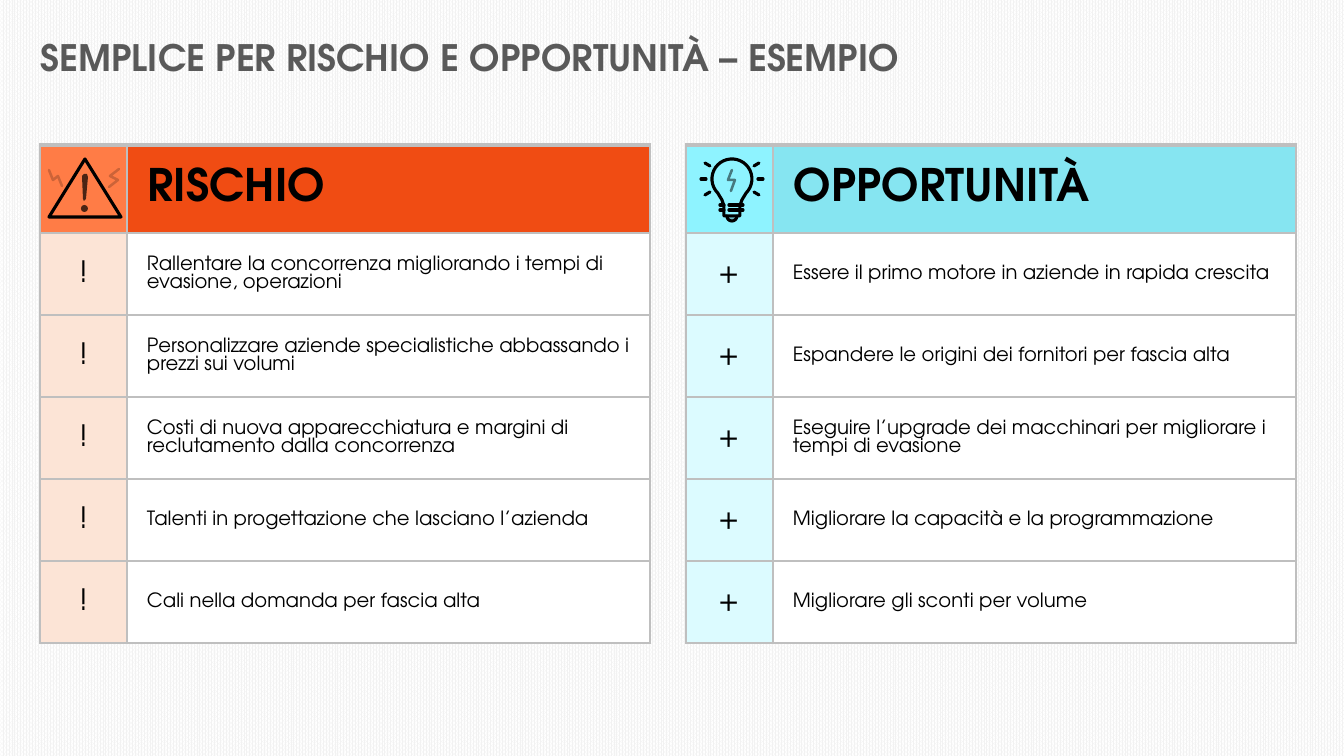
from dataclasses import dataclass
from math import cos, radians, sin

from pptx import Presentation
from pptx.dml.color import RGBColor
from pptx.enum.dml import MSO_PATTERN
from pptx.enum.shapes import MSO_CONNECTOR, MSO_SHAPE
from pptx.enum.text import MSO_ANCHOR, PP_ALIGN
from pptx.oxml.ns import qn
from pptx.util import Pt
from lxml.etree import SubElement

SCALE = 12192000 / 1344


@dataclass(frozen=True)
class Theme:
    font: str = "TeX Gyre Adventor"
    title: str = "595959"
    ink: str = "000000"
    border: str = "BFBFBF"
    paper: str = "FFFFFF"
    weave: str = "F2F2F2"
    title_size: int = 26
    heading_size: int = 32
    mark_size: int = 21
    body_size: int = 14
    icon_line: float = 2.25
    bolt_line: float = 1.8


@dataclass(frozen=True)
class Panel:
    left: int
    heading: str
    mark: str
    icon_fill: str
    heading_fill: str
    mark_fill: str
    items: tuple


THEME = Theme()
TOP, HEADER_HEIGHT, ROW_HEIGHT = 145, 88, 82
MARK_WIDTH, TEXT_WIDTH = 87, 523
PANELS = (
    Panel(40, "RISCHIO", "!", "FF7C46", "F04C13", "FCE4D6", (
        "Rallentare la concorrenza migliorando i tempi di evasione, operazioni",
        "Personalizzare aziende specialistiche abbassando i prezzi sui volumi",
        "Costi di nuova apparecchiatura e margini di reclutamento dalla concorrenza",
        "Talenti in progettazione che lasciano l’azienda",
        "Cali nella domanda per fascia alta",
    )),
    Panel(686, "OPPORTUNITÀ", "+", "8EF3FF", "86E5F1", "DCFBFF", (
        "Essere il primo motore in aziende in rapida crescita",
        "Espandere le origini dei fornitori per fascia alta",
        "Eseguire l’upgrade dei macchinari per migliorare i tempi di evasione",
        "Migliorare la capacità e la programmazione",
        "Migliorare gli sconti per volume",
    )),
)


def px(length):
    return round(length * SCALE)


def rgb(code):
    return RGBColor.from_string(code)


def style_text(frame, size, color=THEME.ink, bold=False, align=PP_ALIGN.LEFT):
    for para in frame.paragraphs:
        para.alignment = align
        for span in para.runs:
            span.font.name = THEME.font
            span.font.size = Pt(size)
            span.font.bold = bold
            span.font.color.rgb = rgb(color)


def add_title(page, text):
    box = page.shapes.add_textbox(px(31), px(30), px(969), px(54))
    frame = box.text_frame
    frame.word_wrap = True
    frame.vertical_anchor = MSO_ANCHOR.BOTTOM
    frame.text = text
    style_text(frame, THEME.title_size, THEME.title, bold=True)


def set_borders(cell, top, right):
    properties = cell._tc.get_or_add_tcPr()
    for side, width in (("L", 1), ("R", right), ("T", top), ("B", 1)):
        line = SubElement(properties, qn(f"a:ln{side}"), w=str(Pt(width)))
        fill = SubElement(line, qn("a:solidFill"))
        SubElement(fill, qn("a:srgbClr"), val=THEME.border)


def fill_cell(cell, text, fill, size, indent=1, bold=False, align=PP_ALIGN.LEFT,
              top=1, right=1):
    set_borders(cell, top, right)
    cell.fill.solid()
    cell.fill.fore_color.rgb = rgb(fill)
    cell.vertical_anchor = MSO_ANCHOR.MIDDLE
    cell.margin_left = px(indent)
    cell.margin_top = cell.margin_right = px(1)
    cell.margin_bottom = 0
    cell.text_frame.text = text
    style_text(cell.text_frame, size, bold=bold, align=align)


def add_panel(page, panel):
    count = len(panel.items)
    table = page.shapes.add_table(
        count + 1, 2, px(panel.left), px(TOP), px(MARK_WIDTH + TEXT_WIDTH),
        px(HEADER_HEIGHT + count * ROW_HEIGHT)).table
    table.first_row = table.horz_banding = False
    for column, width in zip(table.columns, (MARK_WIDTH, TEXT_WIDTH)):
        column.width = px(width)
    for row, height in zip(table.rows, [HEADER_HEIGHT] + [ROW_HEIGHT] * count):
        row.height = px(height)
    fill_cell(table.cell(0, 0), "", panel.icon_fill, THEME.body_size, top=3)
    fill_cell(table.cell(0, 1), panel.heading, panel.heading_fill,
              THEME.heading_size, indent=21, bold=True, top=3, right=2.25)
    for row, item in enumerate(panel.items, 1):
        fill_cell(table.cell(row, 0), panel.mark, panel.mark_fill,
                  THEME.mark_size, align=PP_ALIGN.CENTER)
        fill_cell(table.cell(row, 1), item, THEME.paper, THEME.body_size,
                  indent=20, right=2.25)


def set_opacity(shape, percent):
    if percent < 100:
        for color in shape._element.spPr.iter(qn("a:srgbClr")):
            SubElement(color, qn("a:alpha"), val=str(percent * 1000))


def ink_line(shape, width, opacity=100):
    shape.line.width = Pt(width)
    shape.line.color.rgb = rgb(THEME.ink)
    line = shape._element.spPr.find(qn("a:ln"))
    line.set("cap", "rnd")
    SubElement(line, qn("a:round"))
    set_opacity(shape, opacity)


def ink_fill(shape, opacity):
    shape.shadow.inherit = False
    shape.fill.solid()
    shape.fill.fore_color.rgb = rgb(THEME.ink)
    shape.line.fill.background()
    set_opacity(shape, opacity)


def add_outline(icon, points, close=False):
    corners = [(px(x), px(y)) for x, y in points]
    builder = icon.shapes.build_freeform(*corners[0])
    builder.add_line_segments(corners[1:], close=close)
    shape = builder.convert_to_shape()
    shape.shadow.inherit = False
    shape.fill.background()
    return shape


def add_line(icon, start, end):
    line = icon.shapes.add_connector(
        MSO_CONNECTOR.STRAIGHT, px(start[0]), px(start[1]), px(end[0]), px(end[1]))
    ink_line(line, THEME.icon_line)
    SubElement(line._element.spPr, qn("a:effectLst"))


def arc(center, radius, start, end, step):
    return [(center[0] + radius * cos(radians(angle)),
             center[1] + radius * sin(radians(angle)))
            for angle in range(start, end + 1, step)]


def add_warning_icon(page):
    icon = page.shapes.add_group_shape()
    for bolt in (((49, 170), (53, 180), (58, 176), (62, 186)),
                 ((119, 169), (110, 176), (118, 180), (109, 187))):
        ink_line(add_outline(icon, bolt), THEME.bolt_line, 20)
    triangle = add_outline(icon, ((85, 159), (121, 217), (49, 217)), close=True)
    ink_line(triangle, THEME.icon_line)
    bar = ((82, 176), (84, 174), (87, 174), (88, 177), (86, 199), (84, 201), (83, 199))
    ink_fill(add_outline(icon, bar, close=True), 70)
    dot = icon.shapes.add_shape(MSO_SHAPE.OVAL, px(81), px(205), px(7), px(7))
    ink_fill(dot, 70)


def add_bulb_icon(page):
    icon = page.shapes.add_group_shape()
    x, y = center = (732, 179)
    cap = arc((x, 216), 5, 0, 180, 15)
    ink_fill(add_outline(icon, cap, close=True), 24)
    ink_line(add_outline(icon, cap), THEME.icon_line)
    glass = [(x - 8, 216), (x - 8, 206), (x - 10, 200)]
    glass += arc(center, 20, 135, 405, 10)
    glass += [(x + 10, 200), (x + 8, 206), (x + 8, 216)]
    ink_line(add_outline(icon, glass, close=True), THEME.icon_line)
    for level in (205, 210):
        add_line(icon, (x - 12, level), (x - 8, level))
        add_line(icon, (x - 3, level), (x + 11, level))
    for side in (-1, 1):
        add_line(icon, (x + side * 26, y), (x + side * 31, y))
        for rise in (-1, 1):
            add_line(icon, (x + side * 22, y + rise * 13),
                     (x + side * 27, y + rise * 16))
    bolt = ((732, 170), (728, 180), (735, 180), (731, 191))
    ink_line(add_outline(icon, bolt), THEME.bolt_line, 50)


def main():
    deck = Presentation()
    deck.slide_width, deck.slide_height = px(1344), px(756)
    page = deck.slides.add_slide(deck.slide_layouts[6])
    backdrop = page.background.fill
    backdrop.patterned()
    backdrop.pattern = MSO_PATTERN.PERCENT_80
    backdrop.fore_color.rgb = rgb(THEME.weave)
    backdrop.back_color.rgb = rgb(THEME.paper)
    add_title(page, "SEMPLICE PER RISCHIO E OPPORTUNITÀ – ESEMPIO")
    for panel in PANELS:
        add_panel(page, panel)
    add_warning_icon(page)
    add_bulb_icon(page)
    deck.save("out.pptx")


if __name__ == "__main__":
    main()
